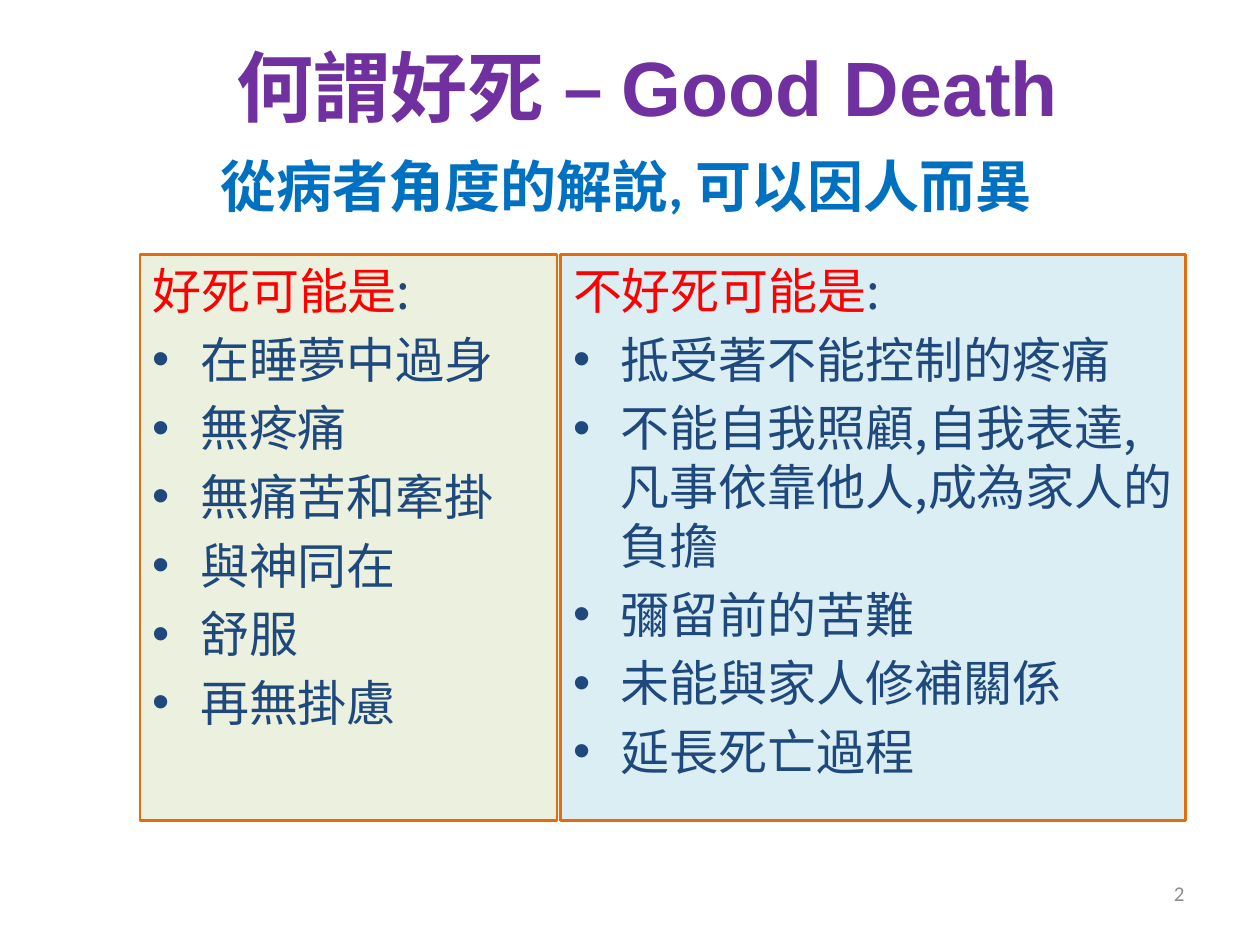
from pptx import Presentation
from pptx.dml.color import RGBColor
from pptx.enum.shapes import MSO_SHAPE
from pptx.enum.text import MSO_ANCHOR, PP_ALIGN
from pptx.oxml.ns import qn
from pptx.util import Inches, Pt
from lxml.etree import SubElement

CJK_FONT = "Noto Sans CJK SC"
NAVY, RED, ORANGE = "1F497D", "FF0000", "E46C0A"

# Content
TITLE = [("何謂好死 – ", CJK_FONT), ("Good Death", "Arial")]
SUBTITLE = "從病者角度的解說, 可以因人而異"
PANELS = [
    {"left": 1.11, "width": 3.31, "fill": "EBF1DE", "heading": "好死可能是",
     "items": ["在睡夢中過身", "無疼痛", "無痛苦和牽掛", "與神同在", "舒服", "再無掛慮"]},
    {"left": 4.45, "width": 4.96, "fill": "DBEEF4", "heading": "不好死可能是",
     "items": ["抵受著不能控制的疼痛", "不能自我照顧,自我表達, 凡事依靠他人,成為家人的負擔",
               "彌留前的苦難", "未能與家人修補關係", "延長死亡過程"]},
]
PANEL_TOP, PANEL_HEIGHT = 2.02, 4.49


def color(value):
    return RGBColor.from_string(value)


def add_run(paragraph, text, size=28, font=CJK_FONT, fill=NAVY, bold=False):
    run = paragraph.add_run()
    run.text = text
    run.font.size = Pt(size)
    run.font.name = font
    run.font.bold = bold
    run.font.color.rgb = color(fill)
    properties = run._r.get_or_add_rPr()
    SubElement(properties, qn("a:ea")).set("typeface", font)


def add_text_box(slide, box, align, anchor=MSO_ANCHOR.TOP):
    shape = slide.shapes.add_textbox(*map(Inches, box))
    frame = shape.text_frame
    frame.word_wrap = True
    frame.vertical_anchor = anchor
    frame.paragraphs[0].alignment = align
    return frame.paragraphs[0]


def add_bullet(paragraph):
    properties = paragraph._p.get_or_add_pPr()
    properties.set("marL", str(Inches(0.38)))
    properties.set("indent", str(-Inches(0.38)))
    SubElement(properties, qn("a:buFont")).set("typeface", "Arial")
    SubElement(properties, qn("a:buChar")).set("char", "•")


def add_panel(slide, left, width, fill, heading, items):
    shape = slide.shapes.add_shape(MSO_SHAPE.RECTANGLE, *map(
        Inches, (left, PANEL_TOP, width, PANEL_HEIGHT)))
    shape.shadow.inherit = False
    shape.fill.solid()
    shape.fill.fore_color.rgb = color(fill)
    shape.line.color.rgb = color(ORANGE)
    shape.line.width = Pt(1.5)
    frame = shape.text_frame
    frame.word_wrap = True
    frame.vertical_anchor = MSO_ANCHOR.TOP

    paragraph = frame.paragraphs[0]
    add_run(paragraph, heading, fill=RED)
    add_run(paragraph, ":")
    for item in items:
        paragraph = frame.add_paragraph()
        paragraph.space_before = Pt(5.6)
        add_bullet(paragraph)
        add_run(paragraph, item)
    for paragraph in frame.paragraphs:
        paragraph.alignment = PP_ALIGN.LEFT
        paragraph.line_spacing = Pt(33.6)


presentation = Presentation()
presentation.slide_width, presentation.slide_height = Inches(10), Inches(7.5)
slide = presentation.slides.add_slide(presentation.slide_layouts[6])

# Title and subtitle
title = add_text_box(slide, (1.14, 0.21, 8, 0.94), PP_ALIGN.CENTER, MSO_ANCHOR.MIDDLE)
for text, font in TITLE:
    add_run(title, text, size=44, font=font, fill="7030A0", bold=True)
subtitle = add_text_box(slide, (1.11, 1.15, 7.72, 0.64), PP_ALIGN.CENTER)
add_run(subtitle, SUBTITLE, size=32, font="Calibri", fill="0070C0", bold=True)

# Two panels side by side
for panel in PANELS:
    add_panel(slide, **panel)

# Page number
number = add_text_box(slide, (7.17, 6.83, 2.33, 0.52), PP_ALIGN.RIGHT, MSO_ANCHOR.MIDDLE)
add_run(number, "2", size=12, font="Calibri", fill="8C8C8C")

presentation.save("out.pptx")
